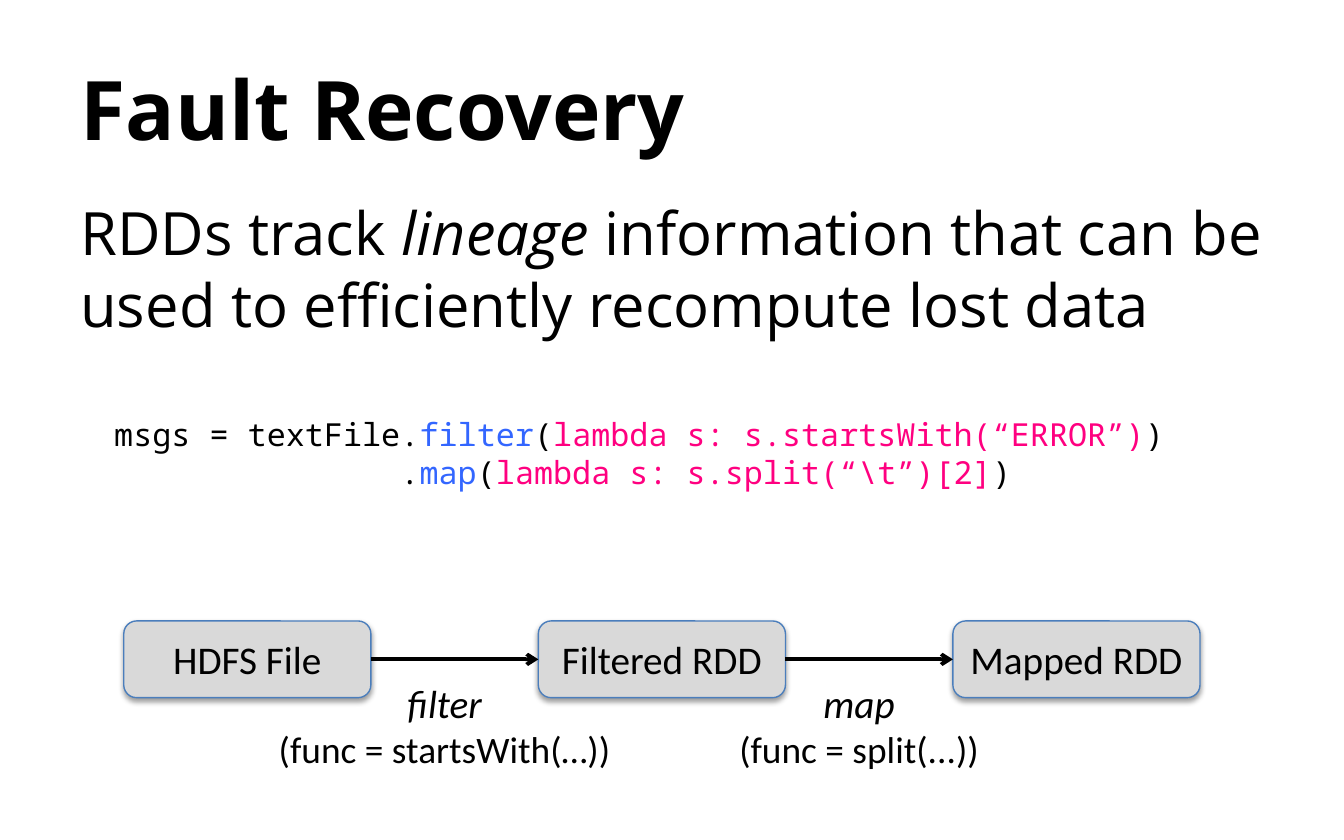
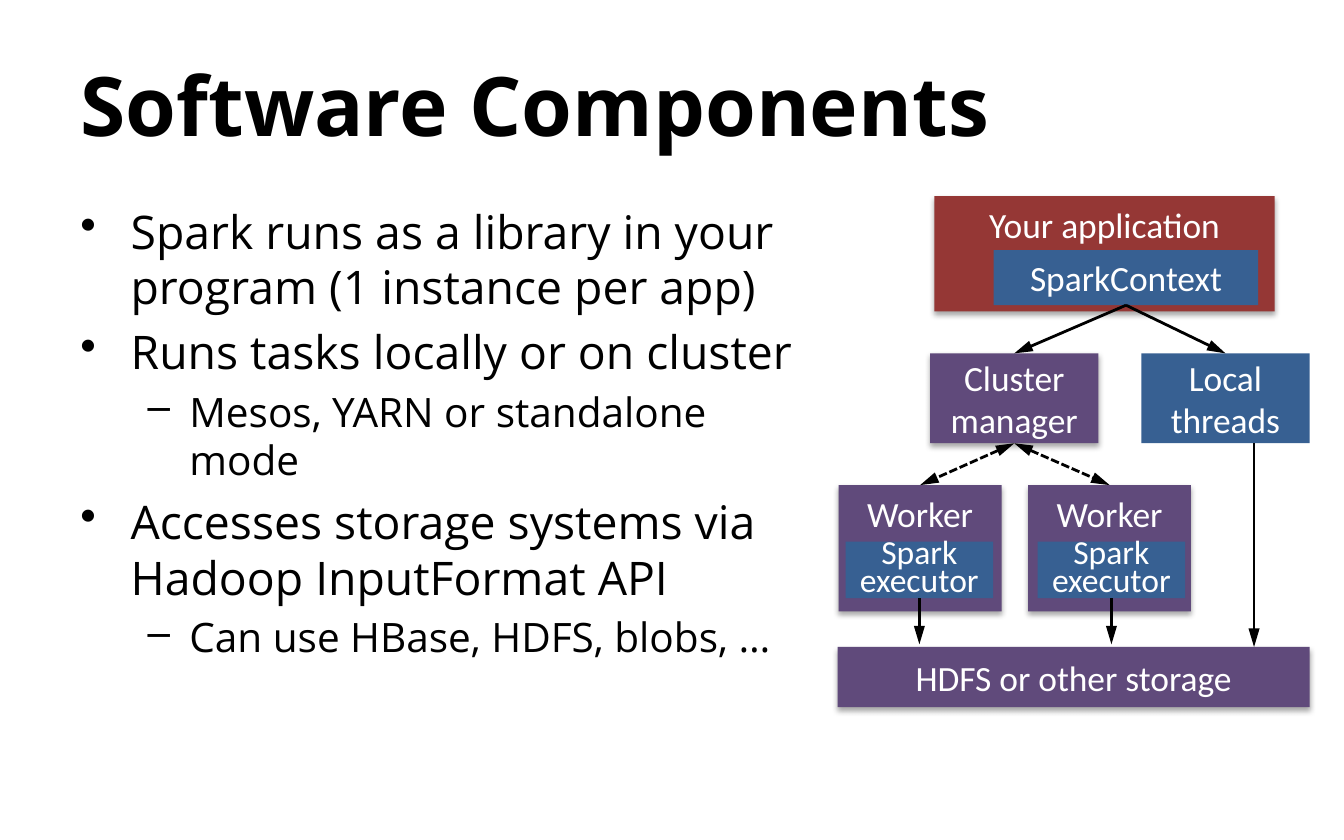
from lxml import etree
from pptx import Presentation
from pptx.dml.color import RGBColor
from pptx.enum.dml import MSO_LINE
from pptx.enum.shapes import MSO_CONNECTOR, MSO_SHAPE
from pptx.enum.text import MSO_ANCHOR, MSO_AUTO_SIZE, PP_ALIGN
from pptx.oxml.ns import qn
from pptx.util import Cm, Pt

CENTER, LEFT = PP_ALIGN.CENTER, PP_ALIGN.LEFT
TOP, MIDDLE = MSO_ANCHOR.TOP, MSO_ANCHOR.MIDDLE
RECTANGLE, ROUNDED = MSO_SHAPE.RECTANGLE, MSO_SHAPE.ROUNDED_RECTANGLE
STRAIGHT = MSO_CONNECTOR.STRAIGHT
DASH = MSO_LINE.SQUARE_DOT
SIDE_TOP, SIDE_LEFT, SIDE_BOTTOM, SIDE_RIGHT = range(4)

HEADING_FONT, CODE_FONT, DIAGRAM_FONT = "Open Sans", "Noto Sans Mono", "Calibri"
BLACK, WHITE, GRAY, OUTLINE = "000000", "FFFFFF", "D9D9D9", "4B7EBC"
RED, BLUE, PURPLE = "953735", "376092", "604A7B"
CODE_BLUE, CODE_PINK = "3366FF", "FF0080"


def rgb(value):
    """Turn a hex string into a colour."""
    return RGBColor.from_string(value)


def set_font(font, name, size, color=BLACK, bold=False):
    """Format one font."""
    font.name, font.size, font.bold = name, Pt(size), bold
    font.color.rgb = rgb(color)


def add_text_box(slide, left, top, width, height, wrap=True):
    """Add an empty text box and return its text frame."""
    frame = slide.shapes.add_textbox(Cm(left), Cm(top), Cm(width), Cm(height)).text_frame
    frame.word_wrap = wrap
    return frame


def next_paragraph(frame, index):
    """Return the first paragraph of a frame, or a new one."""
    return frame.add_paragraph() if index else frame.paragraphs[0]


def add_run(paragraph, text, color=None, italic=None, size=None):
    """Add a run with only the properties that differ from its paragraph."""
    run = paragraph.add_run()
    run.text = text
    if color:
        run.font.color.rgb = rgb(color)
    if italic:
        run.font.italic = True
    if size:
        run.font.size = Pt(size)


def add_shadow(shape, opacity, distance):
    """Give a shape a soft shadow straight below it."""
    effects = shape._element.spPr.find(qn("a:effectLst"))
    shadow = etree.SubElement(effects, qn("a:outerShdw"), blurRad=str(Pt(3.1)),
                              dist=str(Pt(distance)), dir="5400000", rotWithShape="0")
    color = etree.SubElement(shadow, qn("a:srgbClr"), val=BLACK)
    etree.SubElement(color, qn("a:alpha"), val=str(opacity * 1000))


def add_box(slide, kind, left, top, width, height, text, fill, size=19, color=WHITE,
            outline=None, anchor=MIDDLE, side_inset=0.25, spacing=None):
    """Add a filled shape with one centred paragraph."""
    shape = slide.shapes.add_shape(kind, Cm(left), Cm(top), Cm(width), Cm(height))
    shape.shadow.inherit = False
    shape.fill.solid()
    shape.fill.fore_color.rgb = rgb(fill)
    if outline:
        shape.line.color.rgb = rgb(outline)
        shape.line.width = Pt(0.75)
    else:
        shape.line.fill.background()
    frame = shape.text_frame
    frame.word_wrap = True
    frame.vertical_anchor = anchor
    frame.margin_left = frame.margin_right = Cm(side_inset)
    paragraph = frame.paragraphs[0]
    paragraph.text = text
    paragraph.alignment = CENTER
    if spacing:
        paragraph.line_spacing = spacing
    set_font(paragraph.font, DIAGRAM_FONT, size, color)
    return shape


def add_arrow(slide, start, end, width=1.5, head="triangle", length="lg", both=False):
    """Draw an arrow; each end is a (shape, side) pair or a (left, top) point in cm."""
    connector = slide.shapes.add_connector(STRAIGHT, 0, 0, 0, 0)
    if isinstance(start[0], (int, float)):
        connector.begin_x, connector.begin_y = Cm(start[0]), Cm(start[1])
    else:
        connector.begin_connect(*start)
    if isinstance(end[0], (int, float)):
        connector.end_x, connector.end_y = Cm(end[0]), Cm(end[1])
    else:
        connector.end_connect(*end)
    connector.line.color.rgb = rgb(BLACK)
    connector.line.width = Pt(width)
    properties = connector._element.spPr
    line = properties.find(qn("a:ln"))
    if both:
        connector.line.dash_style = DASH
        etree.SubElement(line, qn("a:headEnd"), type=head, len=length)
    etree.SubElement(line, qn("a:tailEnd"), type=head, len=length)
    etree.SubElement(properties, qn("a:effectLst"))


def add_titled_slide(presentation, title, top):
    """Add a title-only slide and format its title."""
    slide = presentation.slides.add_slide(presentation.slide_layouts[5])
    shape = slide.shapes.title
    shape.left, shape.top, shape.width, shape.height = Cm(1.27), Cm(top), Cm(22.86), Cm(2.64)
    frame = shape.text_frame
    frame.auto_size = MSO_AUTO_SIZE.NONE
    frame.vertical_anchor = MIDDLE
    paragraph = frame.paragraphs[0]
    paragraph.text = title
    paragraph.alignment = LEFT
    set_font(paragraph.font, HEADING_FONT, 44, bold=True)
    return slide


def add_statement(slide, left, top, width, height):
    """Add the sentence about lineage."""
    paragraph = add_text_box(slide, left, top, width, height).paragraphs[0]
    set_font(paragraph.font, HEADING_FONT, 32)
    add_run(paragraph, "RDDs track ")
    add_run(paragraph, "lineage", italic=True)
    add_run(paragraph, " information that can be used to efficiently recompute lost data")


def add_code(slide, left, top, width, height):
    """Add the two coloured lines of code."""
    lines = [
        ("msgs = textFile.", "filter", "lambda s: s.startsWith(“ERROR”)"),
        ("               .", "map", "lambda s: s.split(“\\t”)[2]"),
    ]
    frame = add_text_box(slide, left, top, width, height)
    for index, (target, method, function) in enumerate(lines):
        paragraph = next_paragraph(frame, index)
        set_font(paragraph.font, CODE_FONT, 17)
        add_run(paragraph, target)
        add_run(paragraph, method, CODE_BLUE)
        add_run(paragraph, "(")
        add_run(paragraph, function, CODE_PINK)
        add_run(paragraph, ")")


def add_lineage(slide, left, top, width, height):
    """Draw the chain of data sets and the operation below each arrow."""
    names = ["HDFS File", "Filtered RDD", "Mapped RDD"]
    operations = [("filter", "(func = startsWith(…))", 6.93),
                  ("map", "(func = split(...))", 5.11)]
    box_width = 4.67
    step = (width - box_width) / (len(names) - 1)
    boxes = []
    for index, name in enumerate(names):
        box = add_box(slide, ROUNDED, left + index * step, top, box_width, height, name, GRAY,
                      21, BLACK, OUTLINE, side_inset=0)
        add_shadow(box, 38, 1.6)
        boxes.append(box)
    for start, end in zip(boxes, boxes[1:]):
        add_arrow(slide, (start, SIDE_RIGHT), (end, SIDE_LEFT), 2, "arrow", "med")
    for index, (operation, detail, label_width) in enumerate(operations):
        middle = left + (box_width + step) / 2 + index * step - 0.19
        frame = add_text_box(slide, middle - label_width / 2, top + 0.98, label_width, 2, False)
        paragraph = frame.paragraphs[0]
        paragraph.alignment = CENTER
        set_font(paragraph.font, DIAGRAM_FONT, 20)
        add_run(paragraph, operation, italic=True, size=21)
        paragraph.add_line_break()
        add_run(paragraph, detail)


def add_bullets(slide, left, top, width, height):
    """Add the two-level list of features."""
    levels = [("•", 24.8, 0.95, 0.95, 5), ("–", 21.7, 2.06, 0.79, 4.3)]
    items = [
        (0, "Spark runs as a library in your program (1 instance per app)"),
        (0, "Runs tasks locally or on cluster"),
        (1, "Mesos, YARN or standalone mode"),
        (0, "Accesses storage systems via Hadoop InputFormat API"),
        (1, "Can use HBase, HDFS, blobs, …"),
    ]
    frame = add_text_box(slide, left, top, width, height)
    for index, (level, text) in enumerate(items):
        mark, size, margin, hanging, gap = levels[level]
        paragraph = next_paragraph(frame, index)
        paragraph.text = text
        paragraph.level = level
        if index:
            paragraph.space_before = Pt(gap)
        properties = paragraph._p.get_or_add_pPr()
        properties.set("marL", str(Cm(margin)))
        properties.set("indent", str(-Cm(hanging)))
        etree.SubElement(properties, qn("a:buChar"), char=mark)
        set_font(paragraph.font, HEADING_FONT, size)


def add_components(slide, left, top, width, height):
    """Draw the application, its managers and workers, and the storage below."""
    def place(x, y, box_width, box_height, text, fill, **options):
        """Add a rectangle relative to the diagram."""
        box = add_box(slide, RECTANGLE, left + x, top + y, box_width, box_height, text, fill,
                      **options)
        if fill != BLUE:
            add_shadow(box, 35, 1.8)
        return box

    storage_height = 1.14
    storage_top = height - storage_height
    place(1.83, 0, 6.43, 2.18, "Your application", RED, anchor=TOP)
    context = place(2.95, 1.02, 5, 1.04, "SparkContext", BLUE)
    threads = place(width - 3.18, 2.97, 3.18, 1.7, "Local threads", BLUE)
    manager = place(1.75, 2.97, 3.18, 1.7, "Cluster manager", PURPLE)
    workers, executors = [], []
    for worker_left, executor_left in ((0.02, 0.15), (3.6, 3.78)):
        workers.append(place(worker_left, 5.46, 3.08, 2.39, "Worker", PURPLE, anchor=TOP,
                             side_inset=0))
        executors.append(place(executor_left, 6.53, 2.79, 1.07, "Spark executor", BLUE, size=18,
                               spacing=0.7))
    place(0, storage_top, width, storage_height, "HDFS or other storage", PURPLE)

    for target in (manager, threads):
        add_arrow(slide, (context, SIDE_BOTTOM), (target, SIDE_TOP))
    for worker in workers:
        add_arrow(slide, (manager, SIDE_BOTTOM), (worker, SIDE_TOP), both=True)
    for executor in executors:
        middle = (executor.left + executor.width / 2) / Cm(1)
        add_arrow(slide, (executor, SIDE_BOTTOM), (middle, top + storage_top - 0.05))
    threads_line = left + width - 1.05
    add_arrow(slide, (threads_line, top + 4.67), (threads_line, top + storage_top))


def main():
    """Build and save both slides."""
    presentation = Presentation()
    presentation.slide_width, presentation.slide_height = Cm(25.4), Cm(15.88)

    recovery = add_titled_slide(presentation, "Fault Recovery", 0.71)
    add_statement(recovery, 1.27, 3.58, 23.06, 9.65)
    add_code(recovery, 1.91, 7.72, 21.51, 1.7)
    add_lineage(recovery, 2.34, 11.74, 20.34, 1.45)

    components = add_titled_slide(presentation, "Software Components", 0.64)
    add_bullets(components, 1.27, 3.71, 14.1, 10.46)
    add_components(components, 15.83, 3.71, 8.92, 9.66)

    presentation.save("out.pptx")


if __name__ == "__main__":
    main()
